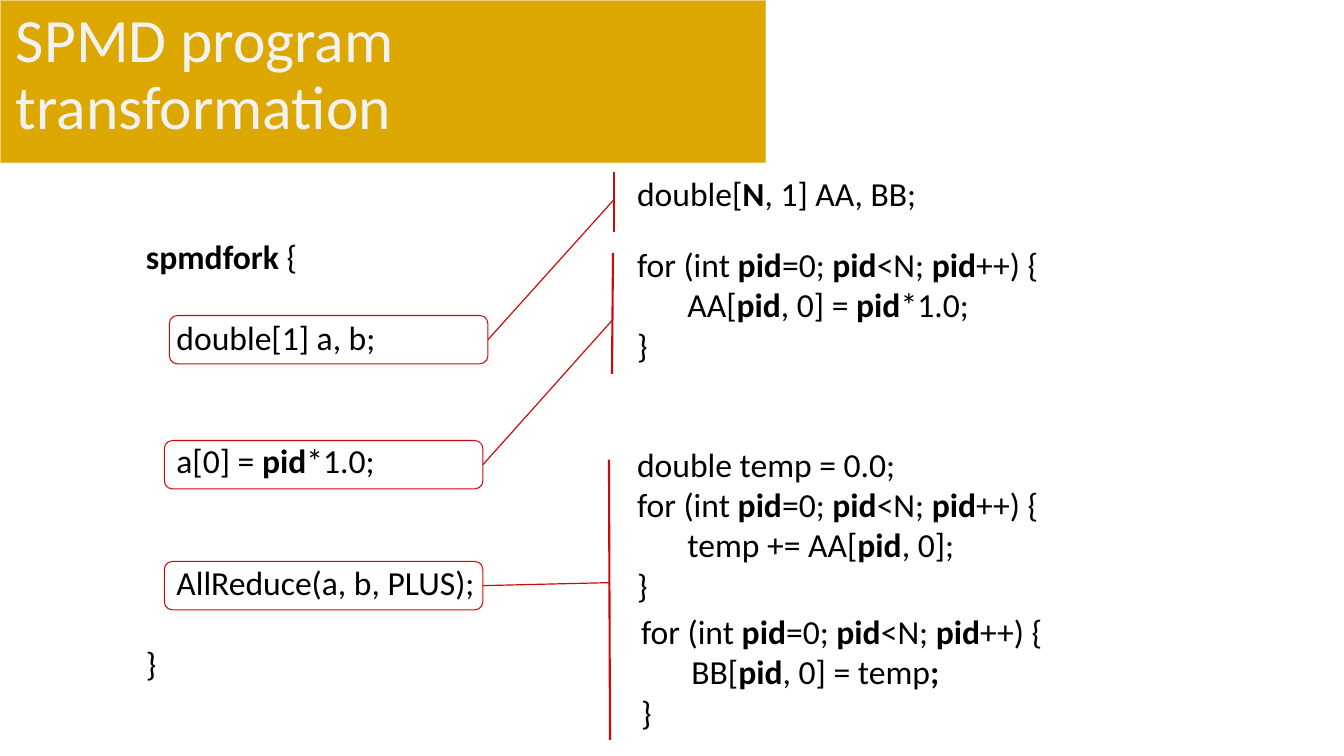
import pptx
import pptx.dml.color
import pptx.enum.shapes
import pptx.enum.text
import pptx.util
from lxml import etree
from pptx.oxml.ns import qn

Inches = pptx.util.Inches
Pt = pptx.util.Pt
MSO_SHAPE = pptx.enum.shapes.MSO_SHAPE
ANCHOR = pptx.enum.text.MSO_ANCHOR


def color(value):
    return pptx.dml.color.RGBColor.from_string(value)


class SlideBuilder:
    """Hold the slide and its style, and add each kind of element."""

    font = "Calibri"
    ink = "000000"
    accent = "CD0909"
    line_height = 29.3

    def __init__(self, slide):
        self.slide = slide

    def banner(self, left, top, width, height):
        shape = self.slide.shapes.add_shape(
            MSO_SHAPE.FLOWCHART_PROCESS,
            Inches(left), Inches(top), Inches(width), Inches(height))
        shape.shadow.inherit = False
        shape.fill.solid()
        shape.fill.fore_color.rgb = color("DCA800")
        shape.line.color.rgb = color("F9F9F9")
        shape.line.width = Pt(1.35)
        line_color = shape.line._ln.find(".//" + qn("a:srgbClr"))
        etree.SubElement(line_color, qn("a:alpha")).set("val", "50000")

    def text(self, left, top, width, height, lines, size=24, ink=ink,
             anchor=ANCHOR.TOP, spacing=None):
        box = self.slide.shapes.add_textbox(
            Inches(left), Inches(top), Inches(width), Inches(height))
        frame = box.text_frame
        frame.word_wrap = True
        frame.vertical_anchor = anchor
        for index, (line, blank_lines) in enumerate(lines):
            paragraph = frame.paragraphs[0] if index == 0 else frame.add_paragraph()
            if spacing:
                paragraph.line_spacing = spacing
            if blank_lines:
                paragraph.space_before = Pt(blank_lines * self.line_height)
            for position, part in enumerate(line.split("|")):
                if part:
                    run = paragraph.add_run()
                    run.text = part
                    run.font.name = self.font
                    run.font.size = Pt(size)
                    run.font.bold = position % 2 == 1
                    run.font.color.rgb = color(ink)

    def code(self, left, top, width, height, *lines):
        self.text(left, top, width, height, [(line, 0) for line in lines])

    def frame(self, left, top, width=3.16, height=0.48):
        shape = self.slide.shapes.add_shape(
            MSO_SHAPE.ROUNDED_RECTANGLE,
            Inches(left), Inches(top), Inches(width), Inches(height))
        shape.shadow.inherit = False
        shape.fill.background()
        shape.line.color.rgb = color(self.accent)
        shape.line.width = Pt(0.75)
        return shape

    def line(self, start, end, width):
        connector = self.slide.shapes.add_connector(
            pptx.enum.shapes.MSO_CONNECTOR.STRAIGHT,
            *(Inches(value) for value in (*start, *end)))
        connector.line.color.rgb = color(self.accent)
        connector.line.width = Pt(width)
        etree.SubElement(connector._element.spPr, qn("a:effectLst"))
        return connector

    def mapping(self, frame_at, bar_start, bar_end, target):
        statement = self.frame(*frame_at)
        self.line(bar_start, bar_end, 1.5)
        link = self.line(frame_at, target, 0.85)
        link.begin_connect(statement, 3)


def main():
    presentation = pptx.Presentation()
    presentation.slide_width = Inches(13.33)
    presentation.slide_height = Inches(7.5)
    builder = SlideBuilder(
        presentation.slides.add_slide(presentation.slide_layouts[6]))

    builder.banner(0, 0, 7.6, 1.62)
    builder.text(0.06, 0.03, 7.51, 1.45, [("SPMD program transformation", 0)],
                 size=44, ink="F2F2F2", anchor=ANCHOR.MIDDLE, spacing=0.9)

    builder.text(1.35, 2.29, 3.87, 4.54, [
        ("|spmdfork |{", 0),
        ("    double[1] a, b;", 1),
        ("    a[0] = |pid|*1.0;", 2),
        ("    AllReduce(a, b, PLUS);", 2),
        ("}", 1),
    ])

    loop = "for (int |pid|=0; |pid|<N; |pid|++) {"
    builder.code(6.22, 1.67, 3, 0.5, "double[|N|, 1] AA, BB;")
    builder.code(6.22, 2.37, 4.23, 1.31,
                 loop, "\tAA[|pid|, 0] = |pid|*1.0;", "}")
    builder.code(6.22, 4.35, 4.23, 2.02,
                 "double temp = 0.0;", loop, "\ttemp += AA[|pid|, 0];", "}")
    builder.code(6.26, 6.01, 4.23, 1.31,
                 loop, "\tBB[|pid|, 0] = temp|;|", "}")

    builder.mapping((1.68, 3.13), (6.09, 1.71), (6.09, 2.3), (6.09, 1.98))
    builder.mapping((1.63, 4.37), (6.08, 2.51), (6.07, 3.71), (6.07, 3.18))
    builder.mapping((1.63, 5.57), (6.04, 4.56), (6.05, 7.34), (6.05, 5.78))

    presentation.save("out.pptx")


if __name__ == "__main__":
    main()
